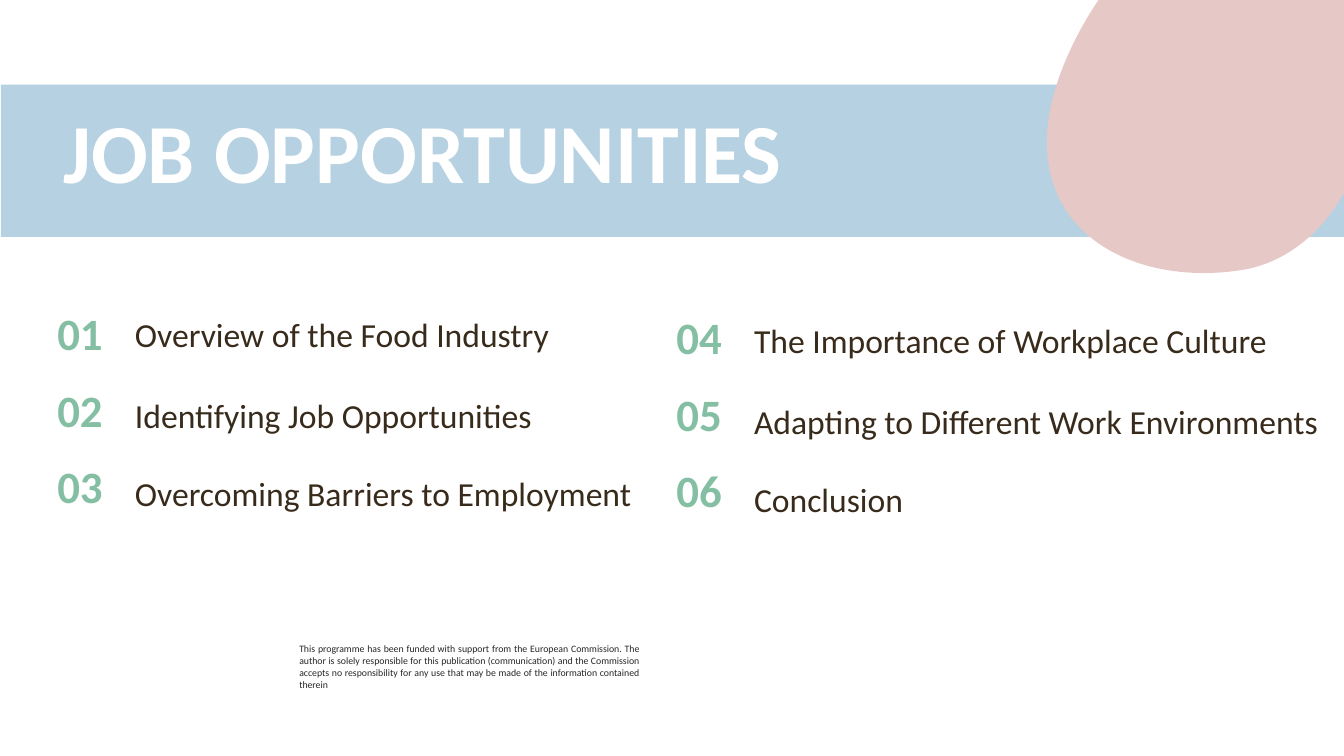
from dataclasses import dataclass

from lxml.etree import SubElement
from pptx import Presentation
from pptx.dml.color import RGBColor
from pptx.enum.shapes import MSO_SHAPE
from pptx.enum.text import MSO_ANCHOR, PP_ALIGN
from pptx.oxml.ns import qn
from pptx.slide import Slide
from pptx.text.text import _Paragraph
from pptx.util import Inches, Pt

WHITE = RGBColor(0xFF, 0xFF, 0xFF)
BLUE = RGBColor(0xB6, 0xD1, 0xE1)
GREEN = RGBColor(0x84, 0xBF, 0xA4)
BROWN = RGBColor(0x38, 0x2B, 0x1B)
PINK = RGBColor(0xE6, 0xC8, 0xC7)
CHARCOAL = RGBColor(0x26, 0x26, 0x26)

FONT = "Calibri"
ROW_HEIGHT = 0.75
NUMBER_WIDTH = 0.77
NUMBER_PITCH = 0.76
TOPIC_PITCH = 0.77

Point = tuple[float, float]


@dataclass(frozen=True)
class TextStyle:
    size: float
    color: RGBColor
    bold: bool = False
    anchor: MSO_ANCHOR = MSO_ANCHOR.TOP


@dataclass(frozen=True)
class Topic:
    text: str
    width: float


@dataclass(frozen=True)
class AgendaColumn:
    left: float
    number_top: float
    topic_top: float
    first_number: int
    topics: tuple[Topic, ...]


TITLE_STYLE = TextStyle(60, WHITE, bold=True)
NUMBER_STYLE = TextStyle(32, GREEN, bold=True, anchor=MSO_ANCHOR.MIDDLE)
TOPIC_STYLE = TextStyle(24, BROWN, anchor=MSO_ANCHOR.MIDDLE)
DISCLAIMER_STYLE = TextStyle(7, CHARCOAL)

COLUMNS = (
    AgendaColumn(0.47, 2.96, 2.96, 1, (
        Topic("Overview of the Food Industry", 5.25),
        Topic("Identifying Job Opportunities", 5.25),
        Topic("Overcoming Barriers to Employment", 6.35),
    )),
    AgendaColumn(6.61, 3.0, 3.02, 4, (
        Topic("The Importance of Workplace Culture", 5.62),
        Topic("Adapting to Different Work Environments", 6.22),
        Topic("Conclusion", 5.25),
    )),
)

DISCLAIMER = (
    "This programme has been funded with support from the European Commission. "
    "The author is solely responsible for this publication (communication) and "
    "the Commission accepts no responsibility for any use that may be made of "
    "the information contained therein"
)

BLOB_LEFT, BLOB_TOP, BLOB_WIDTH, BLOB_HEIGHT = 10.39, -0.62, 3.22, 3.32
BLOB_START: Point = (12.34, -0.54)
BLOB_CURVES: tuple[tuple[Point, Point, Point], ...] = (
    ((11.91, -0.67), (11.46, -0.67), (11.12, -0.29)),
    ((10.79, 0.08), (10.47, 0.68), (10.4, 1.18)),
    ((10.24, 2.33), (11.27, 2.84), (12.31, 2.68)),
    ((13.32, 2.52), (13.83, 1.19), (13.52, 0.24)),
    ((13.43, -0.05), (13.16, -0.18), (12.91, -0.3)),
    ((12.73, -0.39), (12.54, -0.48), BLOB_START),
)


def add_text(page: Slide, left: float, top: float, width: float, height: float,
             text: str, style: TextStyle) -> _Paragraph:
    box = page.shapes.add_textbox(Inches(left), Inches(top), Inches(width), Inches(height))
    frame = box.text_frame
    frame.word_wrap = True
    frame.vertical_anchor = style.anchor
    para = frame.paragraphs[0]
    span = para.add_run()
    span.text = text
    span.font.name = FONT
    span.font.size = Pt(style.size)
    span.font.bold = style.bold
    span.font.color.rgb = style.color
    return para


def add_banner(page: Slide) -> None:
    banner = page.shapes.add_shape(
        MSO_SHAPE.RECTANGLE, Inches(0.01), Inches(0.84), Inches(13.33), Inches(1.51))
    banner.shadow.inherit = False
    banner.fill.solid()
    banner.fill.fore_color.rgb = BLUE
    banner.line.fill.background()


def add_title(page: Slide) -> None:
    title = add_text(page, 0.53, 1.3, 9.35, 0.76, "JOB OPPORTUNITIES", TITLE_STYLE)
    title.line_spacing = Pt(46)


def add_agenda_column(page: Slide, column: AgendaColumn) -> None:
    for row, topic in enumerate(column.topics):
        number = add_text(
            page, column.left, column.number_top + row * NUMBER_PITCH,
            NUMBER_WIDTH, ROW_HEIGHT, f"{column.first_number + row:02}", NUMBER_STYLE)
        number.line_spacing = 0.9
        entry = add_text(
            page, column.left + NUMBER_WIDTH, column.topic_top + row * TOPIC_PITCH,
            topic.width, ROW_HEIGHT, topic.text, TOPIC_STYLE)
        entry.line_spacing = 1.07 if row else 0.9
        if row:
            entry.space_after = Pt(8)


def add_blob(page: Slide) -> None:
    builder = page.shapes.build_freeform(Inches(BLOB_START[0]), Inches(BLOB_START[1]))
    builder.add_line_segments(
        [(Inches(x), Inches(y)) for *_, (x, y) in BLOB_CURVES], close=True)
    blob = builder.convert_to_shape()
    blob.left, blob.top = Inches(BLOB_LEFT), Inches(BLOB_TOP)
    blob.width, blob.height = Inches(BLOB_WIDTH), Inches(BLOB_HEIGHT)
    blob.shadow.inherit = False
    blob.fill.solid()
    blob.fill.fore_color.rgb = PINK
    blob.line.fill.background()

    outline = next(blob._element.iter(qn("a:path")))
    for segment in list(outline):
        outline.remove(segment)
    outline.set("w", str(blob.width))
    outline.set("h", str(blob.height))
    commands = [("a:moveTo", (BLOB_START,))]
    commands += [("a:cubicBezTo", curve) for curve in BLOB_CURVES]
    for tag, points in commands:
        segment = SubElement(outline, qn(tag))
        for x, y in points:
            SubElement(segment, qn("a:pt"), x=str(Inches(x - BLOB_LEFT)),
                       y=str(Inches(y - BLOB_TOP)))
    SubElement(outline, qn("a:close"))


def main() -> None:
    deck = Presentation()
    deck.slide_width = Inches(13.33)
    deck.slide_height = Inches(7.5)
    page = deck.slides.add_slide(deck.slide_layouts[6])
    add_banner(page)
    add_title(page)
    for column in COLUMNS:
        add_agenda_column(page, column)
    add_blob(page)
    disclaimer = add_text(page, 2.87, 6.33, 3.57, 0.48, DISCLAIMER, DISCLAIMER_STYLE)
    disclaimer.alignment = PP_ALIGN.JUSTIFY
    deck.save("out.pptx")


if __name__ == "__main__":
    main()
